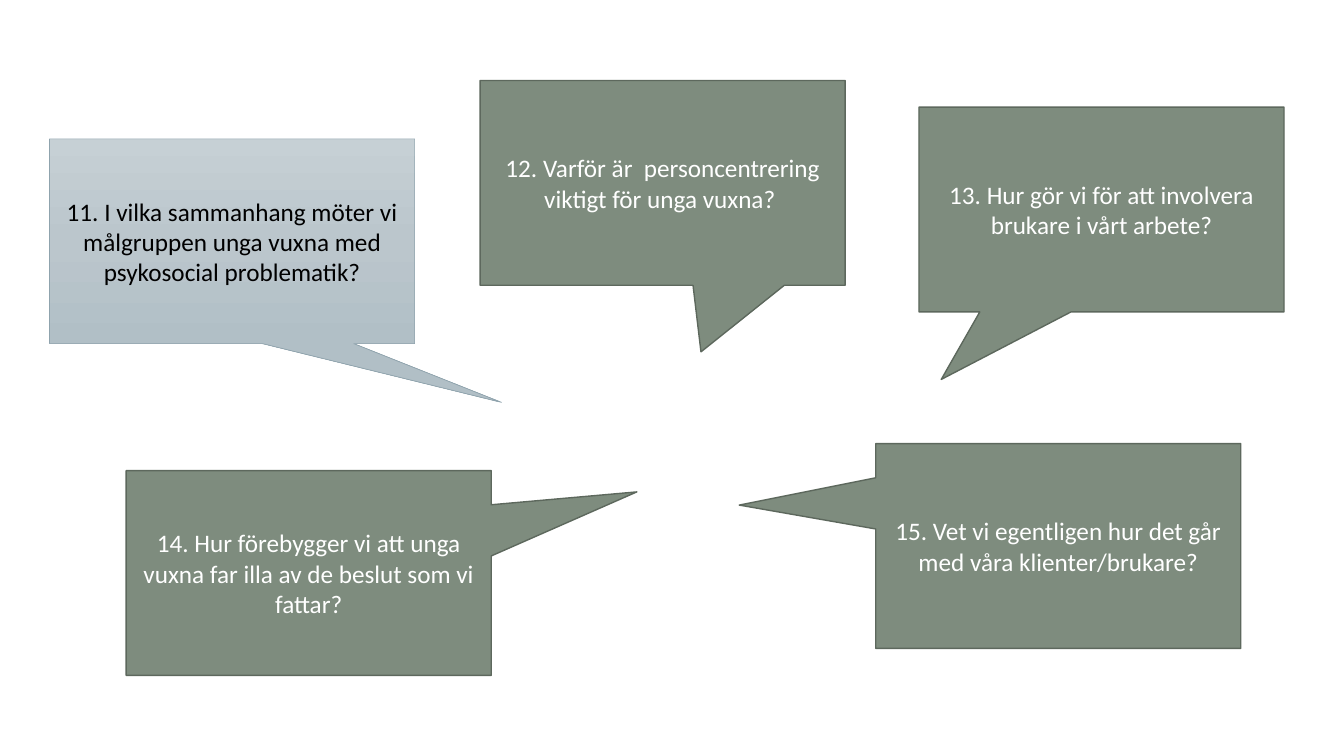
from copy import deepcopy
from dataclasses import dataclass

from pptx import Presentation
from pptx.dml.color import RGBColor
from pptx.enum.shapes import MSO_SHAPE
from pptx.enum.text import MSO_ANCHOR, PP_ALIGN
from pptx.oxml.ns import qn
from pptx.shapes.autoshape import Shape
from pptx.slide import Slide
from pptx.util import Cm, Pt

CALLOUT = MSO_SHAPE.RECTANGULAR_CALLOUT
MIDDLE = MSO_ANCHOR.MIDDLE
CENTER = PP_ALIGN.CENTER


@dataclass(frozen=True)
class Style:
    fill: tuple[str, ...]  # one colour is solid, three make a gradient
    line: str
    line_width: float
    text: str


@dataclass(frozen=True)
class Theme:
    font: str = "Calibri"
    size: int = 18
    green: Style = Style(("7E8C7E",), "5D685D", 1, "FFFFFF")
    mist: Style = Style(("C6D0D5", "BBC6CC", "B1BFC6"), "8FA3AD", 0.5, "000000")


@dataclass(frozen=True)
class Question:
    text: str
    left: float
    top: float
    tip: tuple[float, float]  # pointer tip, as a share of the box from its centre
    style: Style


THEME = Theme()
BOX_W, BOX_H = Cm(9.2), Cm(5.16)

QUESTIONS = [
    Question("11. I vilka sammanhang möter vi målgruppen unga vuxna med psykosocial problematik?",
             1.25, 3.5, (0.738, 0.787), THEME.mist),
    Question("12. Varför är  personcentrering viktigt för unga vuxna? ",
             12.1, 2.03, (0.105, 0.825), THEME.green),
    Question("15. Vet vi egentligen hur det går med våra klienter/brukare?",
             22.07, 11.18, (-0.874, -0.2), THEME.green),
    Question("13. Hur gör vi för att involvera brukare i vårt arbete?",
             23.16, 2.7, (-0.439, 0.83), THEME.green),
    Question("14. Hur förebygger vi att unga vuxna far illa av de beslut som vi fattar?",
             3.18, 11.86, (0.899, -0.396), THEME.green),
]


def paint(sp: Shape, style: Style) -> None:
    """Fill and outline a callout."""
    if len(style.fill) == 1:
        sp.fill.solid()
        sp.fill.fore_color.rgb = RGBColor.from_string(style.fill[0])
    else:
        sp.fill.gradient()
        sp.fill.gradient_angle = 270
        # The default gradient has two stops; add one in the middle
        stops = sp.element.spPr.find(qn("a:gradFill")).find(qn("a:gsLst"))
        stops.insert(1, deepcopy(stops[0]))
        for i, (stop, color) in enumerate(zip(sp.fill.gradient_stops, style.fill)):
            stop.position = i / (len(style.fill) - 1)
            stop.color.rgb = RGBColor.from_string(color)
    sp.line.color.rgb = RGBColor.from_string(style.line)
    sp.line.width = Pt(style.line_width)
    sp.shadow.inherit = False


def add_question(s: Slide, q: Question) -> None:
    """Draw one speech callout with its question."""
    sp = s.shapes.add_shape(CALLOUT, Cm(q.left), Cm(q.top), BOX_W, BOX_H)
    for i, offset in enumerate(q.tip):
        sp.adjustments[i] = offset
    paint(sp, q.style)

    tf = sp.text_frame
    tf.word_wrap = True
    tf.vertical_anchor = MIDDLE
    p = tf.paragraphs[0]
    p.alignment = CENTER
    r = p.add_run()
    r.text = q.text
    font_format = {"name": THEME.font, "size": Pt(THEME.size)}
    for name, value in font_format.items():
        setattr(r.font, name, value)
    r.font.color.rgb = RGBColor.from_string(q.style.text)


def main() -> None:
    prs = Presentation()
    prs.slide_width, prs.slide_height = Cm(33.87), Cm(19.05)
    s = prs.slides.add_slide(prs.slide_layouts[6])

    # Discussion questions around the open centre
    for q in QUESTIONS:
        add_question(s, q)

    prs.save("out.pptx")


if __name__ == "__main__":
    main()
